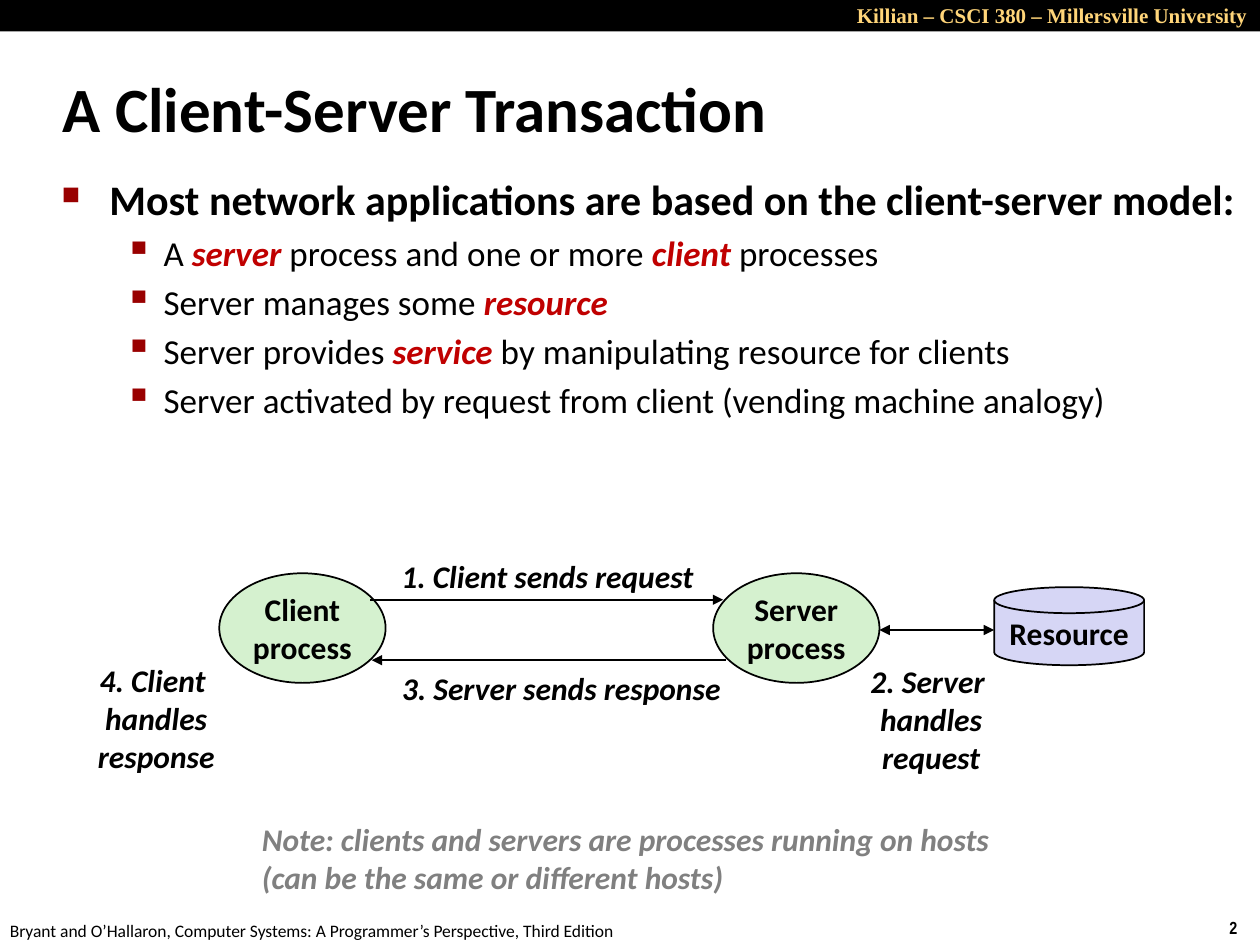
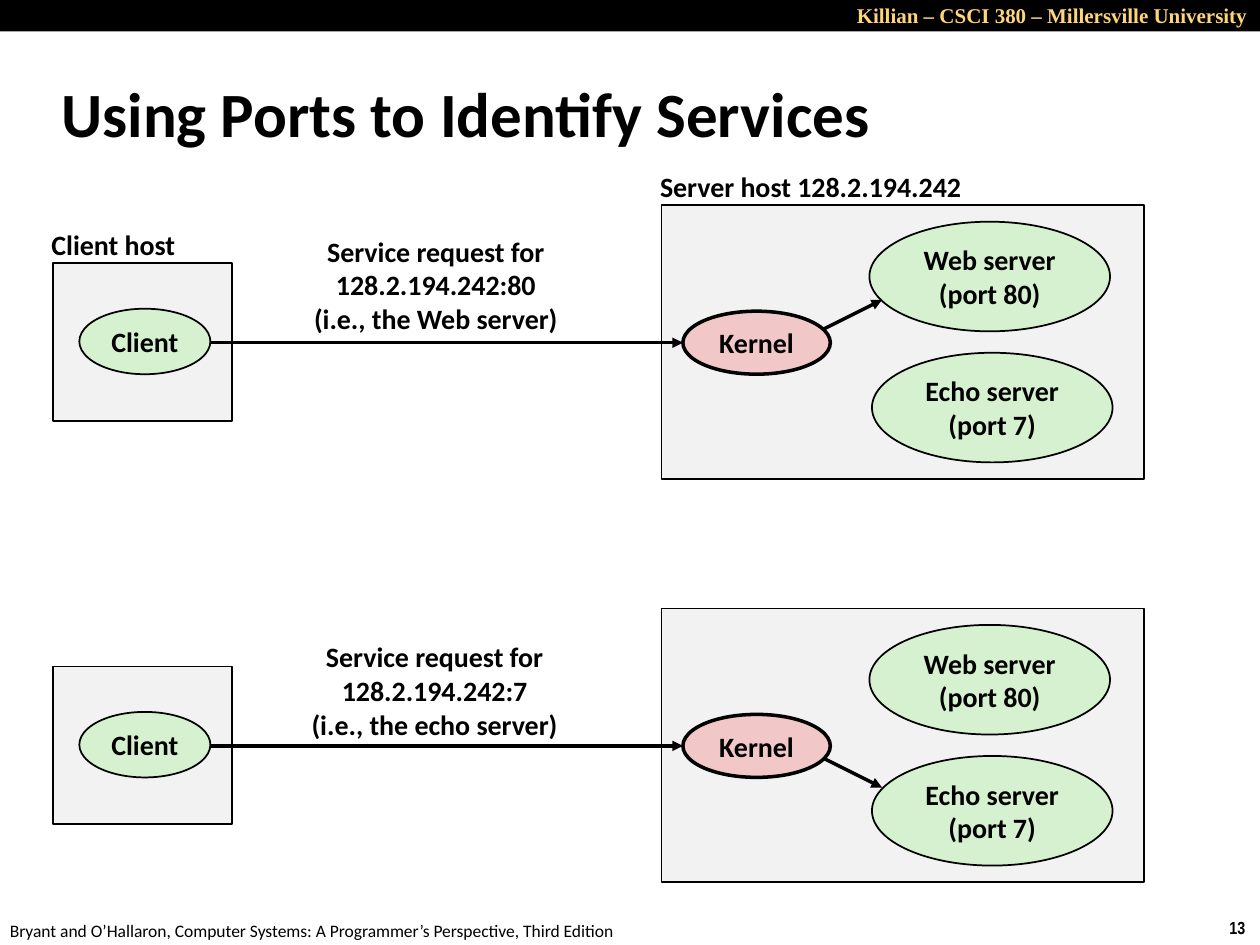
import pptx
import pptx.util
import pptx.dml.color
import pptx.enum.shapes
import pptx.enum.text
import pptx.oxml
import pptx.oxml.ns
from lxml import etree

Inches = pptx.util.Inches
Pt = pptx.util.Pt
SHAPE = pptx.enum.shapes.MSO_SHAPE
ALIGN = pptx.enum.text.PP_ALIGN
ANCHOR = pptx.enum.text.MSO_ANCHOR
FIT = pptx.enum.text.MSO_AUTO_SIZE

# ---- Shared look ----
COLORS = {
    "black": "000000", "gold": "FFD579", "bullet": "990000", "key": "C00000",
    "note": "808080", "process": "D5F1CF", "resource": "D6D6F5",
    "host": "F2F2F2", "kernel": "F1C7C7",
}
FONTS = {  # font attributes, colour apart
    "header": dict(name="Times New Roman", size=Pt(12), bold=True),
    "number": dict(name="Arial Narrow", size=Pt(10), bold=True),
    "credit": dict(name="Calibri", size=Pt(10)),
    "title": dict(name="Calibri", size=Pt(36), bold=True),
    "topic": dict(name="Calibri", size=Pt(24), bold=True),
    "point": dict(name="Calibri", size=Pt(20)),
    "key": dict(name="Calibri", size=Pt(20), bold=True, italic=True),
    "node": dict(name="Calibri", size=Pt(18), bold=True),
    "step": dict(name="Calibri", size=Pt(18), bold=True, italic=True),
    "note": dict(name="Calibri", size=Pt(18), bold=True, italic=True),
    "port": dict(name="Calibri", size=Pt(16), bold=True),
}
FONT_COLORS = {"header": "gold", "key": "key", "note": "note"}
FREE = dict(word_wrap=False, auto_size=FIT.SHAPE_TO_FIT_TEXT)
FREE_MIDDLE = dict(FREE, vertical_anchor=ANCHOR.MIDDLE)
WRAPPED = dict(word_wrap=True)
WRAPPED_MIDDLE = dict(word_wrap=True, vertical_anchor=ANCHOR.MIDDLE)
IN_SHAPE = dict(word_wrap=False, vertical_anchor=ANCHOR.MIDDLE)

HEADER = "Killian – CSCI 380 – Millersville University"
CREDIT = ("Bryant and O’Hallaron, Computer Systems: "
          "A Programmer’s Perspective, Third Edition")

# ---- Slide 1 content: boxes are left, top, width, height ----
TRANSACTION = dict(title="A Client-Server Transaction", number="2",
                   title_box=(0.4, 0.54, 7.83, 0.63))
TOPIC = "Most network applications are based on the client-server model:"
POINTS = [  # words between asterisks are key terms
    "A *server* process and one or more *client *processes",
    "Server manages some *resource*",
    "Server provides *service* by manipulating resource for clients",
    "Server activated by request from client (vending machine analogy)",
]
ROLES = [
    (SHAPE.OVAL, (1.74, 4.55, 1.32, 0.87), "process", ["Client", "process"]),
    (SHAPE.OVAL, (5.66, 4.55, 1.32, 0.87), "process", ["Server", "process"]),
    (SHAPE.FLOWCHART_MAGNETIC_DISK, (7.89, 4.66, 1.19, 0.62), "resource",
     ["Resource"]),
]
MESSAGES = [  # start, end, arrow at both ends
    ((2.94, 4.76), (5.74, 4.76), False),
    ((5.76, 5.24), (2.95, 5.24), False),
    ((6.98, 5), (7.89, 5), True),
]
STEPS = [
    ((3.07, 4.37, 2.55, 0.4), ["1. Client sends request"]),
    ((6.8, 5.2, 1.18, 1.01), ["2. Server ", "handles", "request"]),
    ((3.07, 5.26, 2.77, 0.4), ["3. Server sends response"]),
    ((0.67, 5.19, 1.14, 1.01), ["4. Client ", "handles", "response"]),
]
NOTE = ["Note: clients and servers are processes running on hosts",
        "(can be the same or different hosts)"]

# ---- Slide 2 content: the same scene twice, one row below the other ----
PORTS = dict(title="Using Ports to Identify Services", number="13",
             title_box=(0.39, 0.48, 8.3, 0.83))
ROW_STEP = 3.2
HOST_NAMES = [((0.31, 1.76, 1.19, 0.37), "Client host"),
              ((5.14, 1.3, 2.63, 0.37), "Server host 128.2.194.242")]
HOSTS = [(0.42, 2.09, 1.42, 1.25), (5.25, 1.63, 3.83, 2.17)]
PROGRAMS = [  # box, fill, line width, words
    ((6.9, 1.76, 1.91, 0.87), "process", 1, ["Web server", "(port 80)"]),
    ((6.92, 2.8, 1.91, 0.87), "process", 1, ["Echo server", "(port 7)"]),
    ((5.42, 2.47, 1.17, 0.5), "kernel", 2, ["Kernel"]),
    ((0.63, 2.45, 1.04, 0.52), "process", 1, ["Client"]),
]
REQUEST_ARROW = ((1.67, 2.72), (5.42, 2.72))
REQUESTS = [  # words, box in the first row, arrow from kernel to service
    (["Service request for", "128.2.194.242:80", "(i.e., the Web server)"],
     (2.01, 1.81, 2.9, 0.9), ((6.5, 2.63), (7, 2.38))),
    (["Service request for", "128.2.194.242:7", "(i.e., the echo server)"],
     (2.36, 1.83, 2.18, 0.91), ((6.5, 2.8), (7, 3.05))),
]


# ---- Helpers ----
def rgb(color):
    return pptx.dml.color.RGBColor.from_string(COLORS[color])


def apply(target, values):
    for attribute, value in values.items():
        setattr(target, attribute, value)


def add_run(paragraph, words, font):
    run = paragraph.add_run()
    run.text = words
    apply(run.font, FONTS[font])
    run.font.color.rgb = rgb(FONT_COLORS.get(font, "black"))


def write(frame, lines, font, layout, align=ALIGN.LEFT):
    apply(frame, layout)
    for i, words in enumerate(lines):
        paragraph = frame.add_paragraph() if i else frame.paragraphs[0]
        paragraph.alignment = align
        add_run(paragraph, words, font)


def add_text(slide, box, lines, font, layout=FREE, align=ALIGN.LEFT):
    label = slide.shapes.add_textbox(*map(Inches, box))
    write(label.text_frame, lines, font, layout, align)
    return label.text_frame


def add_node(slide, kind, box, fill, lines=(), font="node", width=1):
    node = slide.shapes.add_shape(kind, *map(Inches, box))
    node.shadow.inherit = False
    node.fill.solid()
    node.fill.fore_color.rgb = rgb(fill)
    node.line.color.rgb = rgb("black")
    node.line.width = Pt(width)
    write(node.text_frame, lines, font, IN_SHAPE, ALIGN.CENTER)
    return node


def add_arrow(slide, start, end, width=1, both=False):
    arrow = slide.shapes.add_connector(
        pptx.enum.shapes.MSO_CONNECTOR.STRAIGHT, *map(Inches, start + end))
    arrow.line.color.rgb = rgb("black")
    arrow.line.width = Pt(width)
    line = arrow.line._get_or_add_ln()
    for tip in ("a:headEnd", "a:tailEnd") if both else ("a:tailEnd",):
        etree.SubElement(line, pptx.oxml.ns.qn(tip), type="triangle")
    etree.SubElement(arrow._element.spPr, pptx.oxml.ns.qn("a:effectLst"))


def set_indent(paragraph, left, hanging):
    properties = paragraph._p.get_or_add_pPr()
    properties.set("marL", str(Inches(left)))
    properties.set("indent", str(-Inches(hanging)))
    return properties


def set_bullet(paragraph, left, hanging, mark, percent):
    properties = set_indent(paragraph, left, hanging)
    space = etree.SubElement(properties, pptx.oxml.ns.qn("a:spcBef"))
    color = etree.SubElement(properties, pptx.oxml.ns.qn("a:buClr"))
    for parent, tag, value in (
            (space, "a:spcPct", "20000"),
            (color, "a:srgbClr", COLORS["bullet"]),
            (properties, "a:buSzPct", str(percent * 1000))):
        etree.SubElement(parent, pptx.oxml.ns.qn(tag), val=value)
    etree.SubElement(properties, pptx.oxml.ns.qn("a:buChar"), char=mark)


def shift(box, down):
    return (box[0], box[1] + down) + tuple(box[2:])


def new_slide(deck, title, number, title_box):
    slide = deck.slides.add_slide(deck.slide_layouts[6])
    band = add_node(slide, SHAPE.RECTANGLE, (0, 0, 10, 0.25), "black")
    band.line.fill.background()
    add_text(slide, (4.5, -0.03, 5.5, 0.3), [HEADER], "header", WRAPPED,
             ALIGN.RIGHT)
    add_text(slide, (9.66, 7.23, 0.34, 0.27), [number], "number")
    add_text(slide, (-0.02, 7.25, 5.08, 0.27), [CREDIT], "credit")
    heading = add_text(slide, title_box, [title], "title", WRAPPED_MIDDLE)
    set_indent(heading.paragraphs[0], 0.13, 0.13)
    return slide


# ---- Slides ----
def build_transaction(deck):
    slide = new_slide(deck, **TRANSACTION)
    body = add_text(slide, (0.39, 1.33, 9.52, 2.25), [TOPIC], "topic", WRAPPED)
    set_bullet(body.paragraphs[0], 0.38, 0.38, "■", 60)
    for point in POINTS:
        paragraph = body.add_paragraph()
        paragraph.level = 1
        set_bullet(paragraph, 0.81, 0.31, "▪", 110)
        for i, words in enumerate(point.split("*")):
            if words:
                add_run(paragraph, words, "key" if i % 2 else "point")

    # Client, server and resource with the four steps
    for kind, box, fill, words in ROLES:
        add_node(slide, kind, box, fill, words)
    for start, end, both in MESSAGES:
        add_arrow(slide, start, end, both=both)
    for box, words in STEPS:
        add_text(slide, box, words, "step", FREE_MIDDLE, ALIGN.CENTER)
    add_text(slide, (1.98, 6.46, 6.11, 0.71), NOTE, "note")


def build_ports(deck):
    slide = new_slide(deck, **PORTS)
    for box, name in HOST_NAMES:
        add_text(slide, box, [name], "port")

    # One row per request
    for row, (words, box, service_arrow) in enumerate(REQUESTS):
        down = row * ROW_STEP
        for host in HOSTS:
            add_node(slide, SHAPE.RECTANGLE, shift(host, down), "host")
        for start, end in (REQUEST_ARROW, service_arrow):
            add_arrow(slide, shift(start, down), shift(end, down), 2)
        for place, fill, width, program in PROGRAMS:
            add_node(slide, SHAPE.OVAL, shift(place, down), fill, program,
                     "port", width)
        add_text(slide, shift(box, down), words, "port", WRAPPED, ALIGN.CENTER)


def main():
    deck = pptx.Presentation()
    deck.slide_width, deck.slide_height = Inches(10), Inches(7.5)
    build_transaction(deck)
    build_ports(deck)
    deck.save("out.pptx")


if __name__ == "__main__":
    main()
